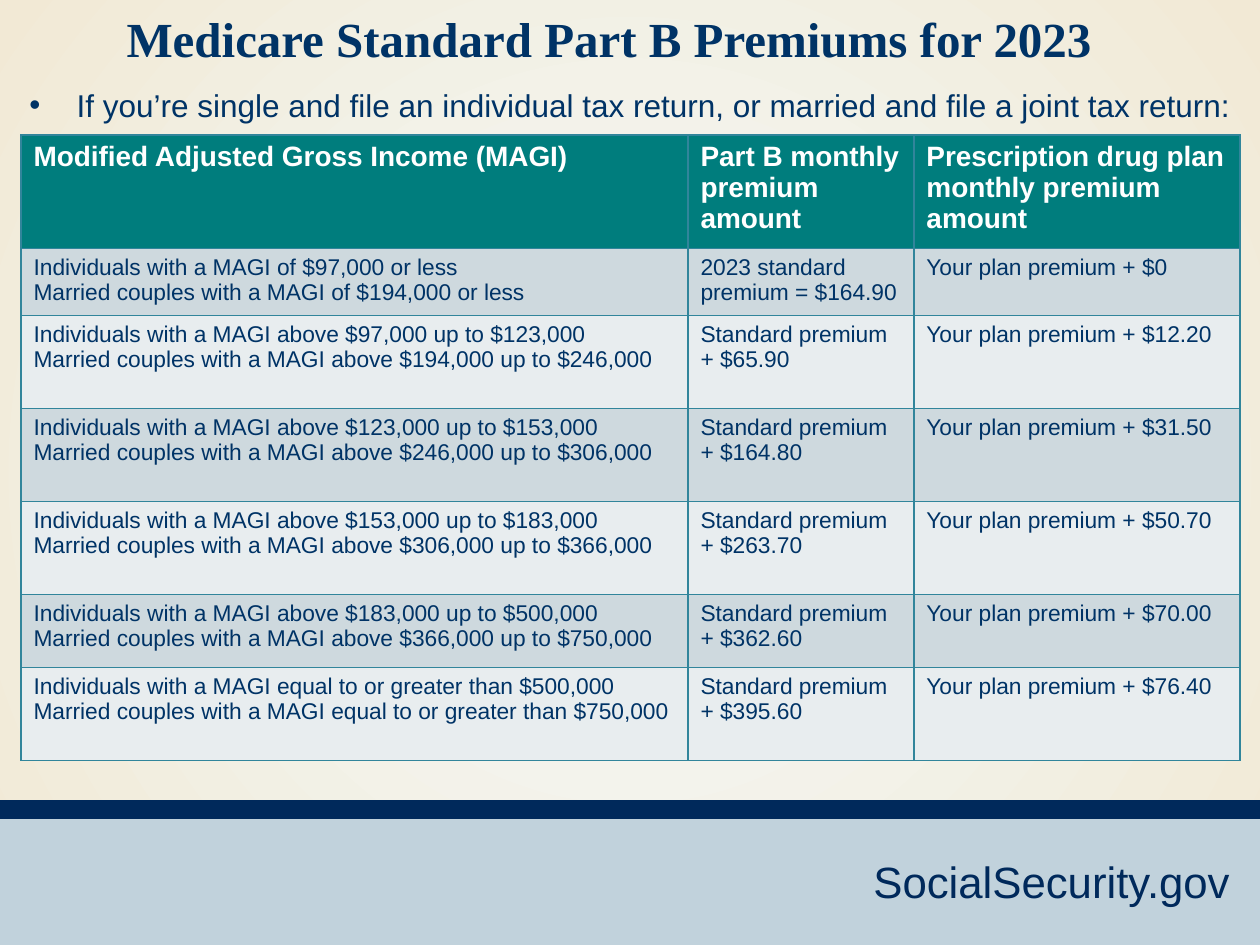
"""Build the slide of Medicare Part B premiums for 2023."""
from dataclasses import dataclass

from lxml import etree
from pptx import Presentation
from pptx import util as u
from pptx.dml.color import RGBColor
from pptx.enum import shapes, text
from pptx.oxml import ns

PX = 914400 / 126
COLOURS = {
    "centre": "F3FAFB", "edge": "F2E9D5", "footer": "C1D2DC", "navy": "00295B",
    "ink": "003366", "header": "007D7D", "white": "FFFFFF", "border": "31859B",
    "band": "CED9DE", "plain": "E8EDEF",
}
COLUMN_WIDTHS = (667, 226, 326)
HEADINGS = (
    "Modified Adjusted Gross Income (MAGI)",
    "Part B monthly premium amount",
    "Prescription drug plan monthly premium amount",
)


@dataclass(frozen=True)
class Box:
    left: int
    top: int
    width: int
    height: int

    def emu(self) -> tuple[u.Emu, ...]:
        return tuple(map(px, (self.left, self.top, self.width, self.height)))


@dataclass(frozen=True)
class Style:
    size: int
    colour: str
    bold: bool = False
    face: str = "Arial"


@dataclass(frozen=True)
class Bracket:
    height: int
    single: str
    married: str
    part_b: str
    drug_plan: str


BRACKETS = (
    Bracket(67, "of $97,000 or less", "of $194,000 or less",
            "2023 standard premium = $164.90", "$0"),
    Bracket(93, "above $97,000 up to $123,000", "above $194,000 up to $246,000",
            "Standard premium\n+ $65.90", "$12.20"),
    Bracket(93, "above $123,000 up to $153,000", "above $246,000 up to $306,000",
            "Standard premium\n+ $164.80", "$31.50"),
    Bracket(93, "above $153,000 up to $183,000", "above $306,000 up to $366,000",
            "Standard premium\n+ $263.70", "$50.70"),
    Bracket(73, "above $183,000 up to $500,000", "above $366,000 up to $750,000",
            "Standard premium\n+ $362.60", "$70.00"),
    Bracket(93, "equal to or greater than $500,000", "equal to or greater than $750,000",
            "Standard premium\n+ $395.60", "$76.40"),
)


def px(length: int) -> u.Emu:
    return u.Emu(round(length * PX))


def rgb(name: str) -> RGBColor:
    return RGBColor.from_string(COLOURS[name])


def write(frame, wording: str, style: Style, align=text.PP_ALIGN.LEFT) -> None:
    frame.text = wording
    for paragraph in frame.paragraphs:
        paragraph.alignment = align
        font = paragraph.font
        font.size, font.bold, font.name = u.Pt(style.size), style.bold, style.face
        font.color.rgb = rgb(style.colour)


def paint_background(slide) -> None:
    fill = slide.background.fill
    fill.gradient()
    for stop, name, position in zip(fill.gradient_stops, ("centre", "edge"), (0, 1)):
        stop.color.rgb = rgb(name)
        stop.position = position
    linear = slide.background._cSld.find(f".//{ns.qn('a:lin')}")
    circle = etree.Element(ns.qn("a:path"), path="circle")
    etree.SubElement(circle, ns.qn("a:fillToRect"), dict.fromkeys("ltrb", "50000"))
    linear.getparent().replace(linear, circle)


def add_bar(slide, box: Box, colour: str) -> None:
    bar = slide.shapes.add_shape(shapes.MSO_SHAPE.RECTANGLE, *box.emu())
    bar.shadow.inherit = False
    bar.fill.solid()
    bar.fill.fore_color.rgb = rgb(colour)
    bar.line.fill.background()


def fill_placeholder(placeholder, box: Box, wording: str, style: Style) -> None:
    placeholder.left, placeholder.top, placeholder.width, placeholder.height = box.emu()
    frame = placeholder.text_frame
    frame.auto_size = text.MSO_AUTO_SIZE.NONE
    frame.vertical_anchor = text.MSO_ANCHOR.MIDDLE
    properties = frame.paragraphs[0]._p.get_or_add_pPr()
    properties.set("marL", "0")
    properties.set("indent", "0")
    etree.SubElement(properties, ns.qn("a:buNone"))
    write(frame, wording, style, text.PP_ALIGN.CENTER)
    frame.paragraphs[0].space_before = u.Pt(0)


def format_cell(cell, wording: str, style: Style, fill: str) -> None:
    write(cell.text_frame, wording, style)
    properties = cell._tc.get_or_add_tcPr()
    for side in "LRTB":
        line = etree.SubElement(properties, ns.qn(f"a:ln{side}"), w=str(u.Pt(1)))
        solid = etree.SubElement(line, ns.qn("a:solidFill"))
        etree.SubElement(solid, ns.qn("a:srgbClr"), val=COLOURS["border"])
    cell.fill.solid()
    cell.fill.fore_color.rgb = rgb(fill)


def add_premium_table(slide, left: int, top: int) -> None:
    heights = [102, *(bracket.height for bracket in BRACKETS)]
    box = Box(left, top, sum(COLUMN_WIDTHS), sum(heights))
    table = slide.shapes.add_table(len(heights), len(COLUMN_WIDTHS), *box.emu()).table
    for column, width in zip(table.columns, COLUMN_WIDTHS):
        column.width = px(width)
    for row, height in zip(table.rows, heights):
        row.height = px(height)
    for column, heading in enumerate(HEADINGS):
        format_cell(table.cell(0, column), heading, Style(16, "white", True), "header")
    for row, bracket in enumerate(BRACKETS, start=1):
        wordings = (
            f"Individuals with a MAGI {bracket.single}\n"
            f"Married couples with a MAGI {bracket.married}",
            bracket.part_b,
            f"Your plan premium + {bracket.drug_plan}",
        )
        for column, wording in enumerate(wordings):
            format_cell(table.cell(row, column), wording, Style(13, "ink"),
                        "band" if row % 2 else "plain")


def main() -> None:
    deck = Presentation()
    deck.slide_width, deck.slide_height = px(1260), px(945)
    slide = deck.slides.add_slide(deck.slide_layouts[1])
    paint_background(slide)
    add_bar(slide, Box(0, 813, 1260, 133), "footer")
    add_bar(slide, Box(0, 800, 1260, 19), "navy")
    site = slide.shapes.add_textbox(*Box(861, 849, 387, 66).emu())
    site.text_frame.word_wrap = True
    write(site.text_frame, "SocialSecurity.gov", Style(25, "navy"))
    fill_placeholder(slide.shapes.title, Box(-21, 0, 1260, 76),
                     "Medicare Standard Part B Premiums for 2023",
                     Style(28, "ink", True, "Times New Roman"))
    fill_placeholder(slide.placeholders[1], Box(0, 78, 1260, 54),
                     "If you’re single and file an individual tax return, "
                     "or married and file a joint tax return:", Style(18, "ink"))
    add_premium_table(slide, 21, 135)
    deck.save("out.pptx")


if __name__ == "__main__":
    main()
